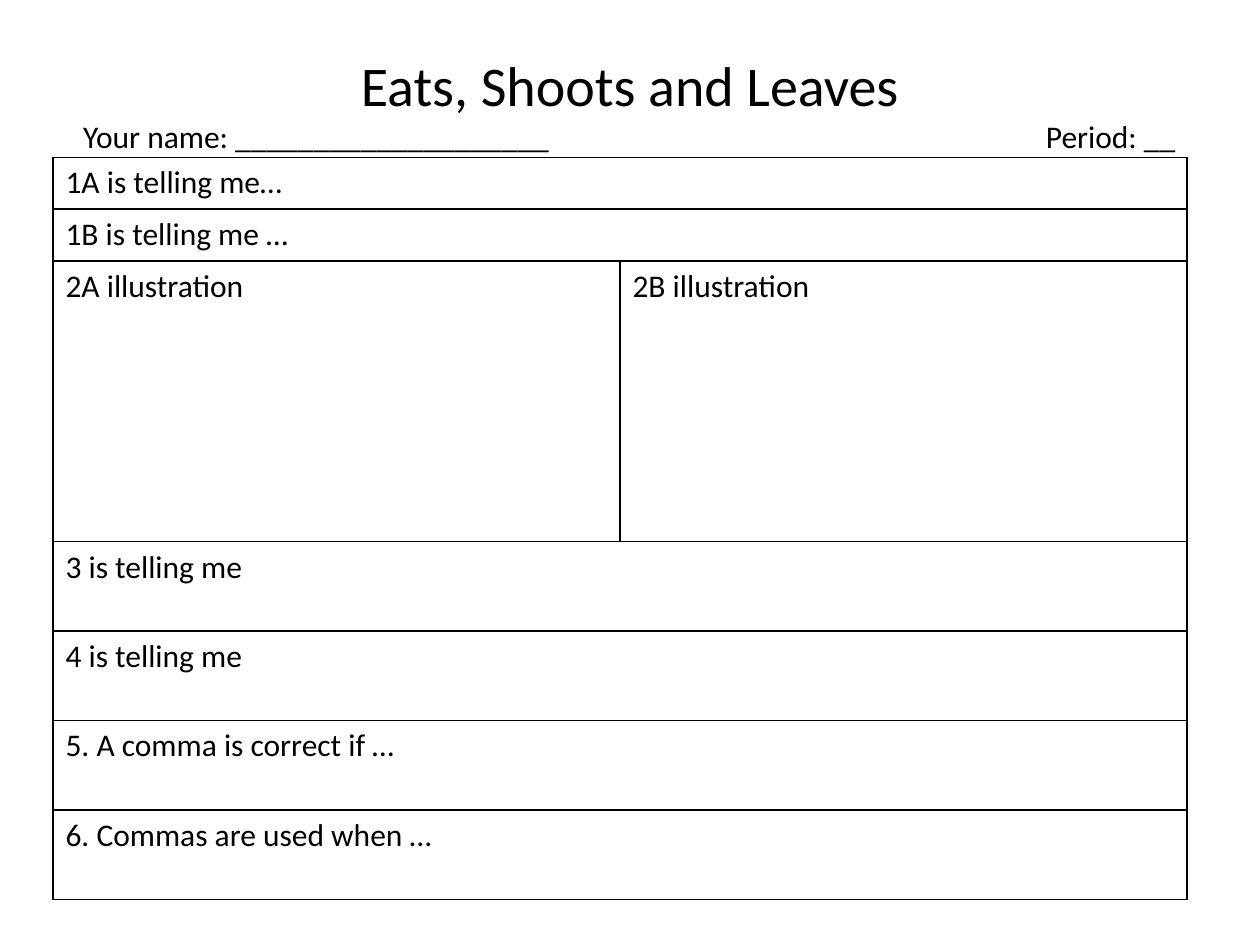
from dataclasses import dataclass

from lxml.etree import SubElement
from pptx import Presentation
from pptx.dml.color import RGBColor
from pptx.enum.text import MSO_ANCHOR, PP_ALIGN
from pptx.oxml.ns import qn
from pptx.util import Inches, Pt

BLACK = RGBColor(0x00, 0x00, 0x00)
FONT = "Calibri"
BODY_SIZE = 18
TITLE_SIZE = 32
COLUMN_WIDTH = 4.5


@dataclass
class PromptRow:
    prompts: tuple[str, ...]  # a single prompt spans both columns
    height: float


ROWS = [
    PromptRow(("1A is telling me…",), 0.41),
    PromptRow(("1B is telling me …",), 0.41),
    PromptRow(("2A illustration", "2B illustration"), 2.23),
    PromptRow(("3 is telling me",), 0.71),
    PromptRow(("4 is telling me",), 0.71),
    PromptRow(("5. A comma is correct if …",), 0.71),
    PromptRow(("6. Commas are used when …",), 0.71),
]


def format_paragraph(paragraph, size: float) -> None:
    for run in paragraph.runs:
        run.font.name = FONT
        run.font.size = Pt(size)
        run.font.color.rgb = BLACK


def add_right_tab(paragraph, position: float) -> None:
    tabs = SubElement(paragraph._p.get_or_add_pPr(), qn("a:tabLst"))
    SubElement(tabs, qn("a:tab"), pos=str(Inches(position)), algn="r")


def add_border(cell) -> None:
    properties = cell._tc.get_or_add_tcPr()
    for index, side in enumerate(("lnL", "lnR", "lnT", "lnB")):
        line = properties.makeelement(qn(f"a:{side}"), {"w": str(Pt(1))})
        fill = SubElement(line, qn("a:solidFill"))
        SubElement(fill, qn("a:srgbClr"), val=str(BLACK))
        properties.insert(index, line)


def add_heading(slide) -> None:
    shape = slide.shapes.add_textbox(Inches(0.5), Inches(0.3), Inches(9), Inches(1.03))
    text_frame = shape.text_frame
    text_frame.word_wrap = True
    text_frame.vertical_anchor = MSO_ANCHOR.MIDDLE
    text_frame.margin_left = text_frame.margin_right = Inches(0.16)
    text_frame.text = f"Eats, Shoots and Leaves\nYour name: {'_' * 20}\tPeriod: __"
    title, name_line = text_frame.paragraphs
    title.alignment = PP_ALIGN.CENTER
    format_paragraph(title, TITLE_SIZE)
    name_line.alignment = PP_ALIGN.LEFT
    add_right_tab(name_line, 8.67)
    format_paragraph(name_line, BODY_SIZE)


def add_prompt_table(slide, rows: list[PromptRow]) -> None:
    height = sum(row.height for row in rows)
    table = slide.shapes.add_table(
        len(rows), 2, Inches(0.42), Inches(1.25), Inches(2 * COLUMN_WIDTH), Inches(height)
    ).table
    table.first_row = table.horz_banding = False
    for column in table.columns:
        column.width = Inches(COLUMN_WIDTH)
    for row_index, row in enumerate(rows):
        table.rows[row_index].height = Inches(row.height)
        for column_index in range(2):
            cell = table.cell(row_index, column_index)
            cell.fill.background()
            add_border(cell)
        if len(row.prompts) == 1:
            table.cell(row_index, 0).merge(table.cell(row_index, 1))
        for column_index, prompt in enumerate(row.prompts):
            text_frame = table.cell(row_index, column_index).text_frame
            text_frame.text = prompt
            format_paragraph(text_frame.paragraphs[0], BODY_SIZE)


def main() -> None:
    presentation = Presentation()
    presentation.slide_width = Inches(10)
    presentation.slide_height = Inches(7.5)
    slide = presentation.slides.add_slide(presentation.slide_layouts[6])

    # Title with the name and period line
    add_heading(slide)
    # Worksheet prompts
    add_prompt_table(slide, ROWS)

    presentation.save("out.pptx")


if __name__ == "__main__":
    main()
